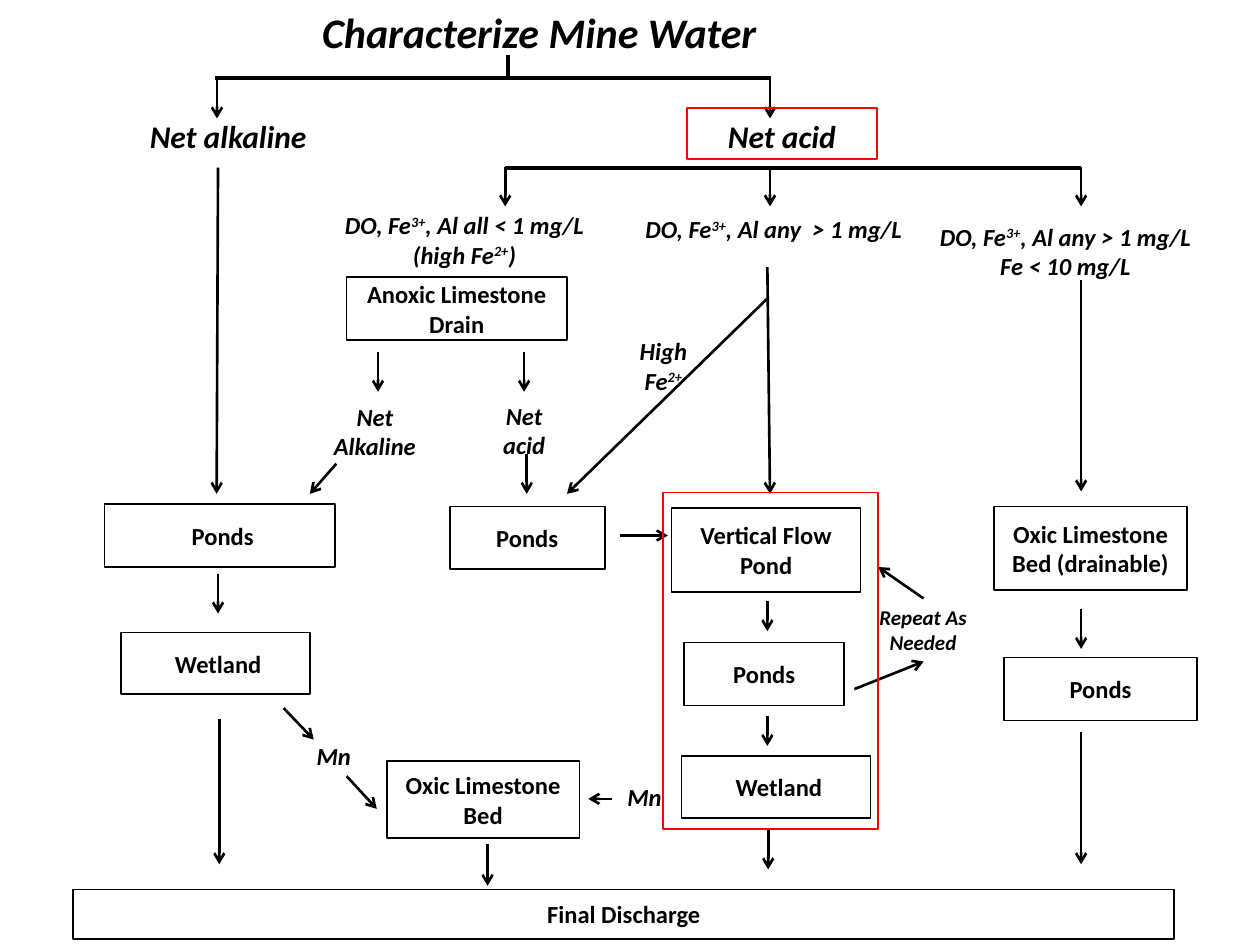
from dataclasses import dataclass
from lxml import etree
from pptx import Presentation
from pptx import util as u
from pptx.dml import color
from pptx.enum import shapes, text
from pptx.oxml import ns

FONT = "Calibri"
BLACK, WHITE, RED = "000000", "FFFFFF", "FF0000"


@dataclass
class Box:
    words: str
    x: float
    y: float
    w: float
    h: float


@dataclass
class Label(Box):
    size: float = 14
    fill: str = ""
    left: bool = False


@dataclass
class Line:
    x1: float
    y1: float
    x2: float
    y2: float
    width: float = 1.5
    head: bool = True


def rgb(code: str) -> color.RGBColor:
    return color.RGBColor.from_string(code)


def write(shape, words: str, size: float, italic: bool, left: bool = False) -> None:
    """One paragraph per line; text between carets is superscript."""
    frame = shape.text_frame
    frame.word_wrap = True
    for row, line in enumerate(words.split("\n")):
        par = frame.add_paragraph() if row else frame.paragraphs[0]
        par.alignment = text.PP_ALIGN.LEFT if left else text.PP_ALIGN.CENTER
        for part, piece in enumerate(line.split("^")):
            if not piece:
                continue
            run = par.add_run()
            run.text = piece
            font = run.font
            font.name, font.size = FONT, u.Pt(size)
            font.bold, font.italic = True, italic
            font.color.rgb = rgb(BLACK)
            if part % 2:
                run._r.get_or_add_rPr().set("baseline", "30000")


def draw_rect(slide, box: Box, fill: str, line: str):
    shape = slide.shapes.add_shape(
        shapes.MSO_SHAPE.RECTANGLE, u.Pt(box.x), u.Pt(box.y), u.Pt(box.w), u.Pt(box.h))
    shape.shadow.inherit = False
    if fill:
        shape.fill.solid()
        shape.fill.fore_color.rgb = rgb(fill)
    else:
        shape.fill.background()
    shape.line.color.rgb = rgb(line)
    shape.line.width = u.Pt(1)
    return shape


def draw_box(slide, box: Box) -> None:
    shape = draw_rect(slide, box, WHITE, BLACK)
    shape.text_frame.vertical_anchor = text.MSO_ANCHOR.MIDDLE
    write(shape, box.words, 14, False)


def draw_label(slide, label: Label) -> None:
    shape = slide.shapes.add_textbox(
        u.Pt(label.x), u.Pt(label.y), u.Pt(label.w), u.Pt(label.h))
    if label.fill:
        shape.fill.solid()
        shape.fill.fore_color.rgb = rgb(label.fill)
    write(shape, label.words, label.size, True, label.left)


def draw_line(slide, line: Line) -> None:
    link = slide.shapes.add_connector(
        shapes.MSO_CONNECTOR.STRAIGHT,
        u.Pt(line.x1), u.Pt(line.y1), u.Pt(line.x2), u.Pt(line.y2))
    link.line.color.rgb = rgb(BLACK)
    link.line.width = u.Pt(line.width)
    if line.head:
        tail = etree.SubElement(link.line._get_or_add_ln(), ns.qn("a:tailEnd"))
        tail.set("type", "arrow")
    etree.SubElement(link._element.spPr, ns.qn("a:effectLst"))


def drop(x: float, top: float, end: float) -> Line:
    return Line(x, top, x, end)


# Columns shared by the vertical arrows
ALK, ANOX, ACID, OXIC = 124, 288.7, 439, 617.8

BOXES = [
    Box("Anoxic Limestone Drain", 198, 158.4, 126, 36),
    Box(" Ponds", 59.8, 288, 131.8, 36),
    Box(" Wetland", 69.1, 361.4, 108, 35.3),
    Box("Ponds", 257, 289.4, 88.6, 36),
    Box("Oxic Limestone Bed", 221, 434.9, 110.2, 43.9),
    Box("Vertical Flow Pond", 383.8, 290.2, 108, 48),
    Box("Ponds", 391, 367.2, 91.4, 36),
    Box(" Wetland", 389.5, 432, 108, 35.3),
    Box("Oxic Limestone Bed (drainable)", 568.1, 289.4, 110.2, 48),
    Box("Ponds", 573.8, 375.8, 110.2, 36),
    Box("Final Discharge", 41.8, 508.3, 629.3, 28.1),
]

LABELS = [
    Label("Characterize Mine Water", 166.3, 0, 283.7, 36, 24),
    Label("Net alkaline", 78.5, 63.4, 113.8, 28.8, 18, left=True),
    Label("Net acid", 401.8, 63.4, 90, 28.8, 18),
    Label("DO, Fe^3+^, Al all < 1 mg/L\n(high Fe^2+^)", 188.6, 116.6, 153.6, 41),
    Label("DO, Fe^3+^, Al any  > 1 mg/L", 356.4, 118.8, 171.4, 38.9),
    Label("DO, Fe^3+^, Al any > 1 mg/L\nFe < 10 mg/L", 527.8, 123.1, 162, 41),
    Label("Net\nAlkaline", 177.1, 226.1, 74.2, 41),
    Label("Net acid", 276.5, 225.4, 46.1, 41),
    Label("High Fe^2+^", 353.5, 188.6, 51.1, 55.4),
    Label("Mn", 167, 419.8, 47.5, 24.5, fill=WHITE),
    Label("Mn", 349.9, 443.5, 36.7, 24.5, fill=WHITE),
    Label("Repeat As Needed", 488.2, 342, 78.5, 36, 12, WHITE),
]

LINES = [
    # Branch bars
    Line(290.2, 31.7, 290.2, 45.4, 2.25, False),
    Line(123.1, 44.6, 440.6, 44.6, 2.25, False),
    Line(ANOX, 96.1, OXIC, 96.1, 2.25, False),
    # Branch arrows
    *(drop(x, 44.6, 67.7) for x in (ALK, 440)),
    *(drop(x, 95.4, 118) for x in (ANOX, 440, OXIC)),
    # Net alkaline column
    Line(124.6, 95.8, 123.8, 282.2),
    drop(124.6, 328.3, 350.6),
    drop(125.3, 411.1, 493.9),
    Line(162, 404.6, 179.3, 422.6),
    Line(198, 443.5, 215.3, 462.2),
    # Anoxic drain column
    *(drop(x, 200.9, 223.9) for x in (216, 299.5)),
    Line(192.2, 265, 177.1, 282.2),
    drop(301, 259.2, 282.2),
    Line(354.2, 306, 381.6, 306),
    drop(278.6, 482.4, 506.2),
    # Vertical flow column
    Line(438.5, 152.6, 440, 282.2),
    Line(438.5, 170.6, 324, 282.2),
    *(drop(438.5, y, y + 17.3) for y in (343.4, 409)),
    drop(ACID, 473.8, 496.8),
    Line(349.9, 456.5, 336.2, 456.5),
    Line(488.2, 393.8, 527.8, 378),
    Line(527.8, 342, 501.8, 324),
    # Oxic bed column
    drop(OXIC, 159.8, 280.8),
    drop(OXIC, 347.8, 370.8),
    drop(OXIC, 418.3, 493.9),
]

FRAMES = [Box("", 378.7, 281.5, 123.1, 192.2), Box("", 392.4, 61.9, 108.7, 28.8)]


def main() -> None:
    deck = Presentation()
    deck.slide_width, deck.slide_height = u.Pt(720), u.Pt(540)
    slide = deck.slides.add_slide(deck.slide_layouts[6])
    for box in BOXES:
        draw_box(slide, box)
    for label in LABELS:
        draw_label(slide, label)
    for line in LINES:
        draw_line(slide, line)
    # Red highlights
    for frame in FRAMES:
        draw_rect(slide, frame, "", RED)
    deck.save("out.pptx")


if __name__ == "__main__":
    main()
